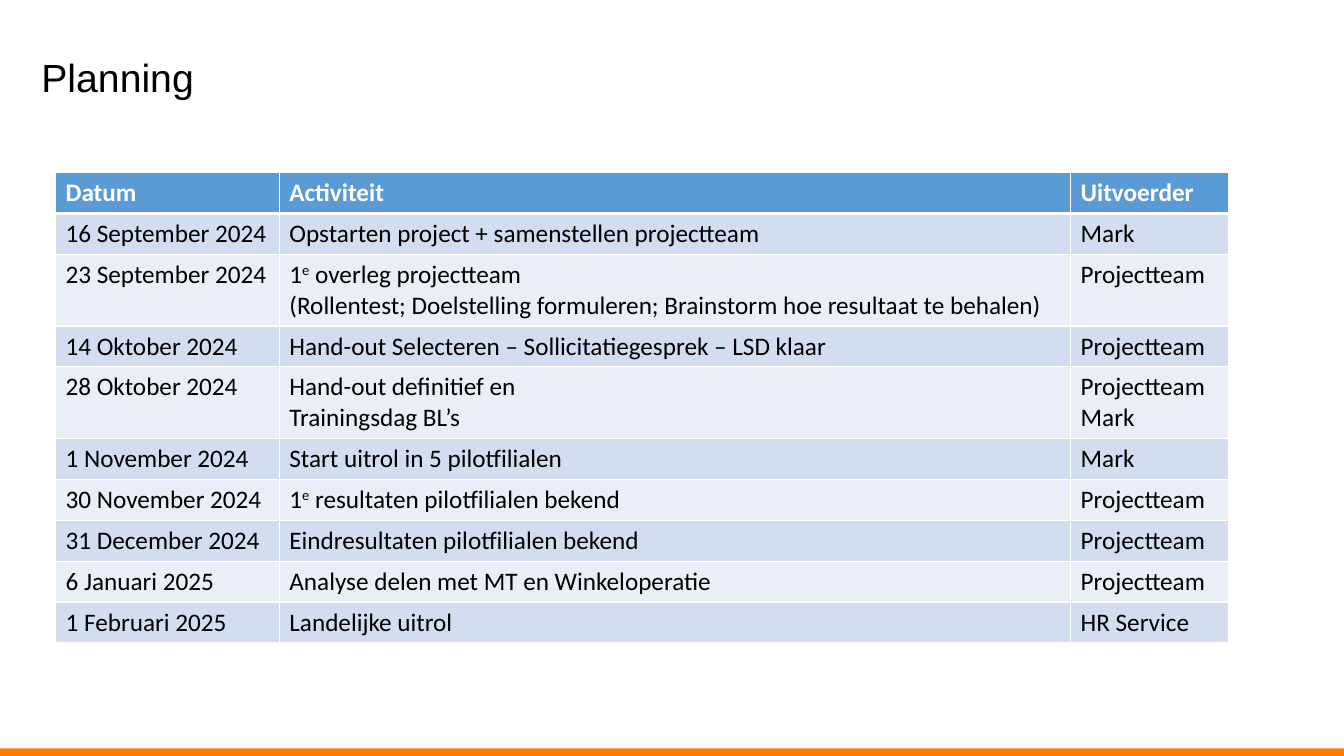
import pptx
import pptx.util
import pptx.dml.color
import pptx.enum.shapes
import pptx.enum.text
import pptx.oxml
import pptx.oxml.ns

Cm = pptx.util.Cm
Pt = pptx.util.Pt
COLORS = {
    "black": "000000",
    "white": "FFFFFF",
    "orange": "FD7900",
    "header": "5B9BD5",
    "odd": "D2DEEF",
    "even": "EAEFF7",
}
PLANNING = [
    ("Datum", "Activiteit", "Uitvoerder"),
    ("16 September 2024", "Opstarten project + samenstellen projectteam", "Mark"),
    ("23 September 2024",
     "1^e^ overleg projectteam\n(Rollentest; Doelstelling formuleren; Brainstorm hoe resultaat te behalen)",
     "Projectteam"),
    ("14 Oktober 2024", "Hand-out Selecteren – Sollicitatiegesprek – LSD klaar", "Projectteam"),
    ("28 Oktober 2024", "Hand-out definitief en\nTrainingsdag BL’s", "Projectteam\nMark"),
    ("1 November 2024", "Start uitrol in 5 pilotfilialen", "Mark"),
    ("30 November 2024", "1^e^ resultaten pilotfilialen bekend", "Projectteam"),
    ("31 December 2024", "Eindresultaten pilotfilialen bekend", "Projectteam"),
    ("6 Januari 2025", "Analyse delen met MT en Winkeloperatie", "Projectteam"),
    ("1 Februari 2025", "Landelijke uitrol", "HR Service"),
]
COLUMN_WIDTHS = [5.64, 19.94, 3.97]
ROW_HEIGHT = 1.03
TALL_ROW_HEIGHT = 1.8


def color(name):
    return pptx.dml.color.RGBColor.from_string(COLORS[name])


def add_border(cell, side, width):
    properties = cell._tc.get_or_add_tcPr()
    properties.append(pptx.oxml.parse_xml(
        f'<a:ln{side} {pptx.oxml.ns.nsdecls("a")} w="{Pt(width)}"><a:solidFill>'
        f'<a:srgbClr val="{COLORS["white"]}"/></a:solidFill></a:ln{side}>'))


deck = pptx.Presentation()
deck.slide_width = Cm(33.87)
deck.slide_height = Cm(19.05)
page = deck.slides.add_slide(deck.slide_layouts[5])

bar = page.shapes.add_shape(
    pptx.enum.shapes.MSO_SHAPE.RECTANGLE, 0, Cm(18.86), deck.slide_width, Cm(0.19))
bar.shadow.inherit = False
bar.fill.solid()
bar.fill.fore_color.rgb = color("orange")
bar.line.fill.background()

title = page.shapes.title
title.left, title.top, title.width, title.height = Cm(0.79), Cm(0.46), Cm(28.65), Cm(3.1)
title.text_frame.text = "Planning"
title.text_frame.vertical_anchor = pptx.enum.text.MSO_ANCHOR.MIDDLE
para = title.text_frame.paragraphs[0]
para.alignment = pptx.enum.text.PP_ALIGN.LEFT
para.line_spacing = 0.9
span = para.runs[0]
span.font.name = "Arial"
span.font.size = Pt(28)
span.font.color.rgb = color("black")

table = page.shapes.add_table(
    len(PLANNING), len(COLUMN_WIDTHS), Cm(1.4), Cm(4.35),
    Cm(sum(COLUMN_WIDTHS)), Cm(ROW_HEIGHT * len(PLANNING))).table
for column, width in zip(table.columns, COLUMN_WIDTHS):
    column.width = Cm(width)

for row_index, entry in enumerate(PLANNING):
    is_header = row_index == 0
    is_tall = any("\n" in text for text in entry)
    table.rows[row_index].height = Cm(TALL_ROW_HEIGHT if is_tall else ROW_HEIGHT)
    fill_name = "header" if is_header else ("even", "odd")[row_index % 2]
    for column_index, text in enumerate(entry):
        cell = table.cell(row_index, column_index)
        for side in "LRTB":
            heavy = (side == "B" and is_header) or (side == "T" and row_index == 1)
            add_border(cell, side, 3 if heavy else 1)
        cell.fill.solid()
        cell.fill.fore_color.rgb = color(fill_name)
        para = cell.text_frame.paragraphs[0]
        for part_index, part in enumerate(text.split("^")):
            for line_index, line in enumerate(part.split("\n")):
                if line_index:
                    para.add_line_break()
                span = para.add_run()
                span.text = line
                span.font.name = "Calibri"
                span.font.size = Pt(18)
                span.font.bold = is_header
                span.font.color.rgb = color("white" if is_header else "black")
                if part_index % 2:
                    span.font._element.set("baseline", "30000")

deck.save("out.pptx")
